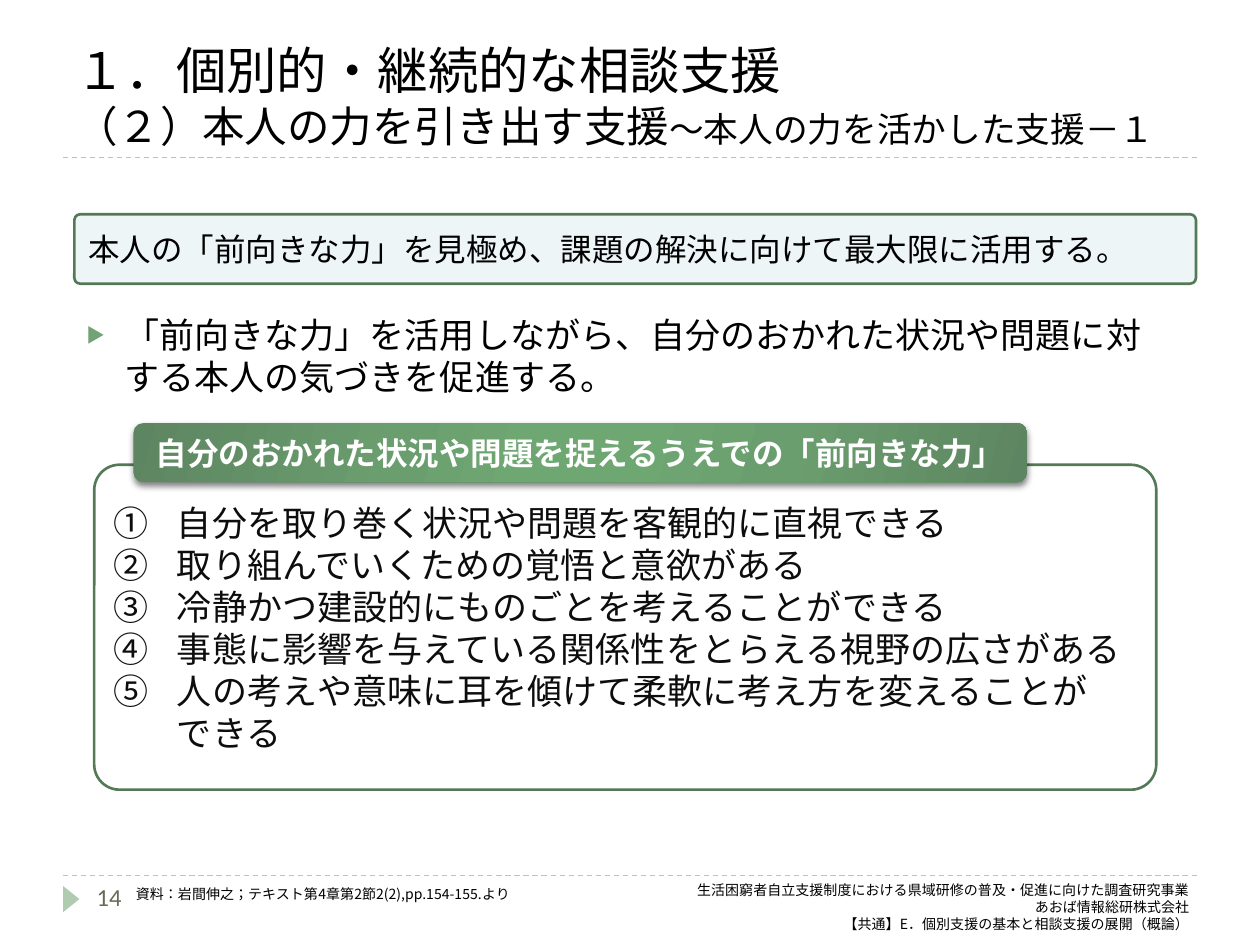
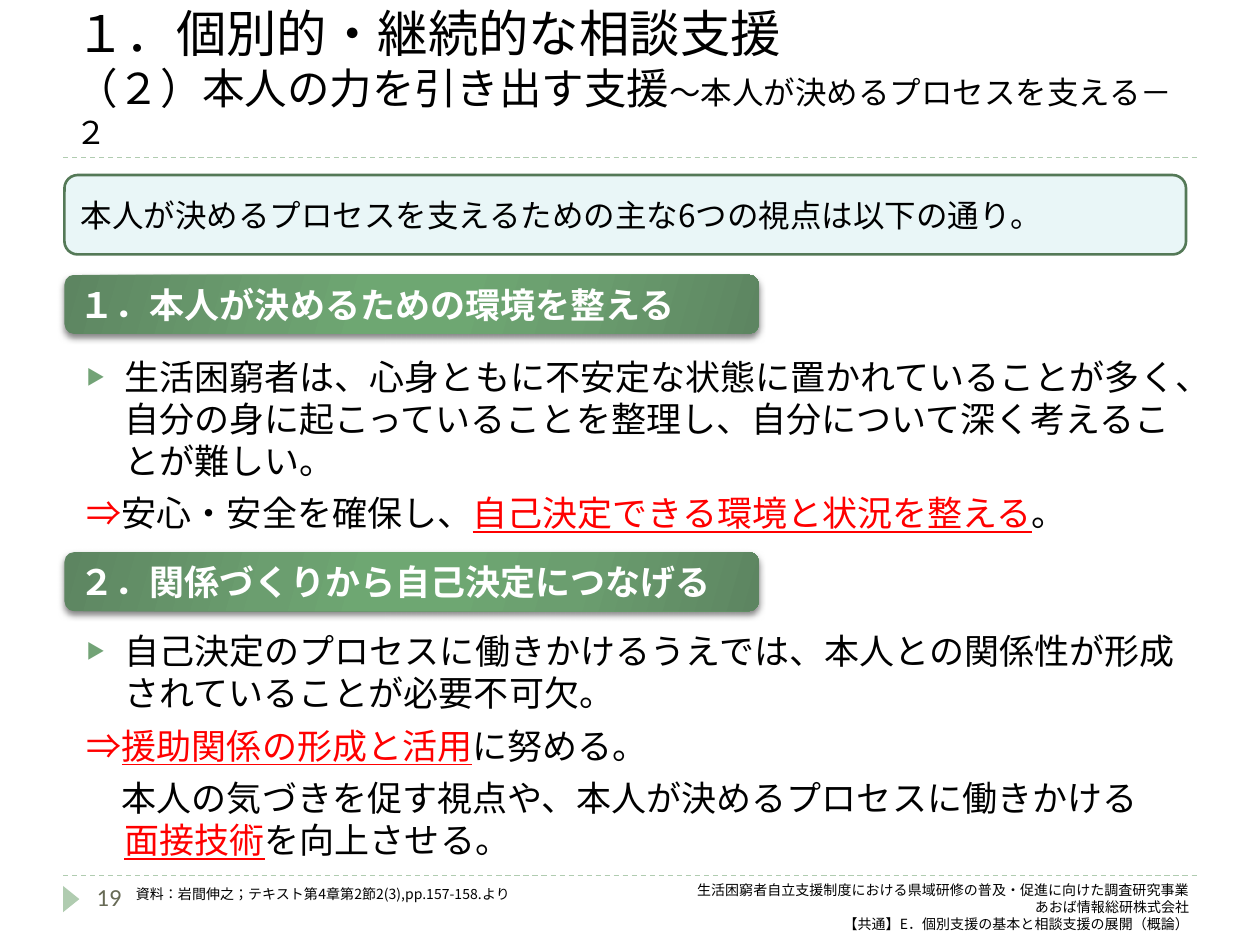
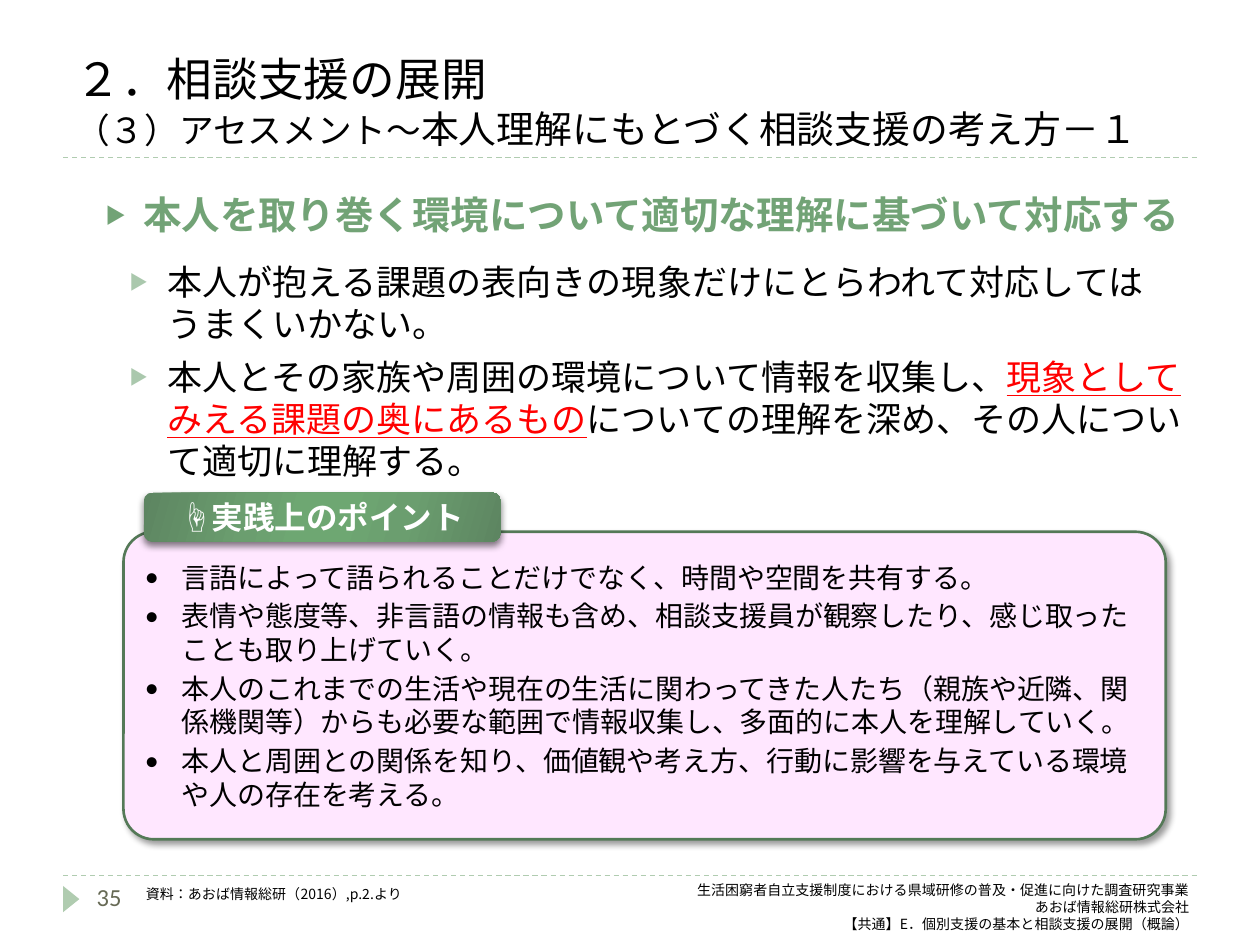
from dataclasses import dataclass

from lxml.etree import SubElement
from pptx import Presentation
from pptx.dml.color import RGBColor
from pptx.enum.dml import MSO_LINE
from pptx.enum.shapes import MSO_CONNECTOR, MSO_SHAPE
from pptx.enum.text import MSO_ANCHOR, PP_ALIGN
from pptx.oxml import parse_xml
from pptx.oxml.ns import nsdecls, qn
from pptx.util import Cm, Pt


@dataclass(frozen=True)
class Theme:
    font: str = "Noto Sans CJK JP"
    digit: str = "Calibri"
    black: str = "000000"
    ink: str = "0D0D0D"
    white: str = "FFFFFF"
    red: str = "FF0000"
    gray: str = "676A55"
    green: str = "72A376"
    pale: str = "AAC8AD"
    rule: str = "B0CCB0"
    edge: str = "547957"
    pink: str = "FFE7FF"
    fade: tuple = ((0, "5D8561"), (30, "6B9E6F"), (45, "6EA772"),
                   (55, "6EA772"), (73, "6B9E6F"), (100, "5D8561"))
    note: float = 8
    page: float = 14
    small: float = 16
    lead: float = 18
    body: float = 20
    head: float = 22


T = Theme()

# Paragraph kinds: indent in cm, space before and after in points, bullet
KINDS = {
    "plain": dict(),
    "arrow": dict(ind=0.76, hang=0.76, before=6, mark="▶", tint=T.green),
    "turn": dict(ind=0.76, hang=0.76, before=6),
    "sub": dict(ind=2.03, hang=0.76, before=6, mark="▶", tint=T.pale),
    "dot": dict(ind=0.74, hang=0.74, after=3, mark="•", font=T.digit),
    "count": dict(ind=1.27, hang=1.27, auto="circleNumDbPlain"),
}

FOOT = [
    "生活困窮者自立支援制度における県域研修の普及・促進に向けた調査研究事業",
    "あおば情報総研株式会社",
    "【共通】E．個別支援の基本と相談支援の展開（概論）",
]

# Content: boxes are left, top, width, height in cm.
# A paragraph is (kind, parts); a part is a string, or a tuple with its look.
SLIDES = [
    dict(
        page="14", wide=23.24,
        title=[("１．個別的・継続的な相談支援\v", 28.8),
               ("（２）本人の力を引き出す支援", 24.3),
               ("～本人の力を活かした支援－１", 19.8)],
        cite=("資料：岩間伸之；テキスト第4章第2節2(2),pp.154-155.より", 2.49, 11.2),
        parts=[
            ("text", (1.5, 6.2, 22.2, 4.11), dict(), [
                ("arrow", ["「前向きな力」を活用しながら、自分のおかれた状況や問題に対する本人の気づきを促進する。"])]),
            ("panel", (1.5, 4.32, 22.61, 1.4),
             dict(fill="EEF5F7", bend=0.084, size=T.lead), [
                ("plain", ["本人の「前向きな力」を見極め、課題の解決に向けて最大限に活用する。"])]),
            ("panel", (1.9, 9.37, 21.41, 6.55),
             dict(fill=T.white, bend=0.078, color=T.ink), [
                ("count", ["自分を取り巻く状況や問題を客観的に直視できる"]),
                ("count", ["取り組んでいくための覚悟と意欲がある"]),
                ("count", ["冷静かつ建設的にものごとを考えることができる"]),
                ("count", ["事態に影響を与えている関係性をとらえる視野の広さがある"]),
                ("count", ["人の考えや意味に耳を傾けて柔軟に考え方を変えることが　できる"])]),
            ("banner", (2.69, 8.53, 18.01, 1.19),
             dict(size=T.lead, align=PP_ALIGN.CENTER), [
                ("plain", ["自分のおかれた状況や問題を捉えるうえでの「前向きな力」"])]),
        ],
    ),
    dict(
        page="19", wide=23.24,
        title=[("１．個別的・継続的な相談支援\v", 28.8),
               ("（２）本人の力を引き出す支援", 24.3),
               ("～本人が決めるプロセスを支える－２", 18)],
        cite=("資料：岩間伸之；テキスト第4章第2節2(3),pp.157-158.より", 2.49, 11.2),
        parts=[
            ("text", (1.5, 7.04, 22.81, 3.89), dict(), [
                ("arrow", ["生活困窮者は、心身ともに不安定な状態に置かれていることが多く、自分の身に起こっていることを整理し、自分について深く考えることが難しい。"]),
                ("turn", [("⇒", "red"), "安心・安全を確保し、",
                          ("自己決定できる環境と状況を整える", "key"), "。"])]),
            ("banner", (1.3, 5.54, 14, 1.19), dict(), [
                ("plain", ["１．本人が決めるための環境を整える"])]),
            ("banner", (1.3, 11.13, 14, 1.19), dict(), [
                ("plain", ["２．関係づくりから自己決定につなげる"])]),
            ("text", (1.5, 12.57, 22.81, 4.95), dict(), [
                ("arrow", ["自己決定のプロセスに働きかけるうえでは、本人との関係性が形成されていることが必要不可欠。"]),
                ("turn", [("⇒", "red"), ("援助関係の形成と活用", "key"), "に努める。"]),
                ("turn", ["　本人の気づきを促す視点や、本人が決めるプロセスに働きかける　",
                          ("面接技術", "key"), "を向上させる。"])]),
            ("panel", (1.3, 3.53, 22.61, 1.6),
             dict(fill="E9F6F7", size=T.lead), [
                ("plain", ["本人が決めるプロセスを支えるための主な6つの視点は以下の通り。"])]),
        ],
    ),
    dict(
        page="35", wide=24.13,
        title=[("２．相談支援の展開\v", 26.1),
               ("（３）アセスメント～", 19.8),
               ("本人理解にもとづく相談支援の考え方－１", 21.6)],
        cite=("資料：あおば情報総研（2016）,p.2.より", 2.69, 14.2),
        parts=[
            ("panel", (2.49, 10.72, 21.01, 6.2),
             dict(fill=T.pink, bend=0.099, size=T.small, drop=(40, 4, 3, 45)), [
                ("dot", ["言語によって語られることだけでなく、時間や空間を共有する。"]),
                ("dot", ["表情や態度等、非言語の情報も含め、相談支援員が観察したり、感じ取ったことも取り上げていく。"]),
                ("dot", ["本人のこれまでの生活や現在の生活に関わってきた人たち（親族や近隣、関係機関等）からも必要な範囲で情報収集し、多面的に本人を理解していく。"]),
                ("dot", ["本人と周囲との関係を知り、価値観や考え方、行動に影響を与えている環境や人の存在を考える。"])]),
            ("text", (1.88, 3.73, 22.63, 2.01),
             dict(size=T.head, color=T.green, bold=True), [
                ("arrow", ["本人を取り巻く環境について適切な理解に基づいて対応する"])]),
            ("text", (1.09, 5.13, 23.01, 4.75), dict(), [
                ("sub", ["本人が抱える課題の表向きの現象だけにとらわれて対応しては　うまくいかない。"]),
                ("sub", ["本人とその家族や周囲の環境について情報を収集し、",
                         ("現象としてみえる課題の奥にあるもの", "key"),
                         "についての理解を深め、その人について適切に理解する。"])]),
            ("banner", (2.9, 9.93, 7.19, 0.99),
             dict(size=T.lead, align=PP_ALIGN.CENTER), [
                ("plain", ["☝実践上のポイント"])]),
        ],
    ),
]


# Text
def rgb(code):
    return RGBColor.from_string(code)


def style(run, size, color=T.black, bold=False, line=False, font=T.font):
    face = run.font
    face.size, face.bold, face.underline = Pt(size), bold, line
    face.name = font
    face.color.rgb = rgb(color)
    props = run._r.get_or_add_rPr()
    props.set("lang", "ja-JP")
    SubElement(props, qn("a:ea")).set("typeface", font)


def shape_para(para, ind=0, hang=0, before=0, after=0,
               mark=None, tint=None, auto=None, font=T.font):
    para.space_before, para.space_after = Pt(before), Pt(after)
    props = para._p.get_or_add_pPr()
    props.set("marL", str(Cm(ind)))
    props.set("indent", str(-Cm(hang)))
    if tint:
        SubElement(SubElement(props, qn("a:buClr")), qn("a:srgbClr")).set("val", tint)
        SubElement(props, qn("a:buSzPct")).set("val", "54000")
    if mark:
        SubElement(props, qn("a:buFont")).set("typeface", font)
        SubElement(props, qn("a:buChar")).set("char", mark)
    elif auto:
        SubElement(props, qn("a:buAutoNum")).set("type", auto)


def write(frame, paras, size=T.body, color=T.black, bold=False, align=PP_ALIGN.LEFT):
    frame.word_wrap = True
    for n, (kind, parts) in enumerate(paras):
        para = frame.add_paragraph() if n else frame.paragraphs[0]
        para.alignment = align
        shape_para(para, **KINDS[kind])
        for part in parts:
            text, look = (part, "") if isinstance(part, str) else part
            run = para.add_run()
            run.text = text
            style(run, size, T.red if look else color, bold, look == "key")


# Parts
def text_box(slide, box):
    frame = slide.shapes.add_textbox(*map(Cm, box)).text_frame
    frame.word_wrap = True
    return frame


def add_drop(shape, alpha, blur, dist, turn):
    host = shape._element.spPr.find(qn("a:effectLst"))
    drop = SubElement(host, qn("a:outerShdw"), blurRad=str(Pt(blur)), dist=str(Pt(dist)),
                      dir=str(turn * 60000), algn="ctr", rotWithShape="0")
    tone = SubElement(drop, qn("a:srgbClr"), val=T.black)
    SubElement(tone, qn("a:alpha"), val=str(alpha * 1000))


def add_round(slide, box, bend=None):
    shape = slide.shapes.add_shape(MSO_SHAPE.ROUNDED_RECTANGLE, *map(Cm, box))
    shape.shadow.inherit = False
    if bend:
        shape.adjustments[0] = bend
    shape.text_frame.vertical_anchor = MSO_ANCHOR.MIDDLE
    return shape


def add_text(slide, box, paras, **look):
    write(text_box(slide, box), paras, **look)


def add_panel(slide, box, paras, fill, bend=None, drop=None, **look):
    shape = add_round(slide, box, bend)
    shape.fill.solid()
    shape.fill.fore_color.rgb = rgb(fill)
    shape.line.color.rgb = rgb(T.edge)
    shape.line.width = Pt(1.5)
    if drop:
        add_drop(shape, *drop)
    write(shape.text_frame, paras, **look)


def add_banner(slide, box, paras, **look):
    shape = add_round(slide, box)
    shape.line.fill.background()
    stops = "".join(f'<a:gs pos="{pos * 1000}"><a:srgbClr val="{tone}"/></a:gs>'
                    for pos, tone in T.fade)
    fill = parse_xml(f'<a:gradFill {nsdecls("a")} rotWithShape="1"><a:gsLst>{stops}</a:gsLst>'
                     f'<a:lin ang="{16 * 60000}" scaled="0"/></a:gradFill>')
    shape._element.spPr.find(qn("a:prstGeom")).addnext(fill)
    add_drop(shape, 50, 4, 2, 90)
    write(shape.text_frame, paras, color=T.white, bold=True, **look)


ADD = {"text": add_text, "panel": add_panel, "banner": add_banner}


# Shared rules, page mark, title and footer
def add_base(slide, item):
    for top in (17.65, 3.18):
        rule = slide.shapes.add_connector(
            MSO_CONNECTOR.STRAIGHT, Cm(1.27), Cm(top), Cm(24.13), Cm(top))
        rule.line.color.rgb = rgb(T.rule)
        rule.line.width = Pt(0.75)
        rule.line.dash_style = MSO_LINE.DASH
        SubElement(rule._element.spPr, qn("a:effectLst"))

    mark = slide.shapes.add_shape(
        MSO_SHAPE.ISOSCELES_TRIANGLE, Cm(1.17), Cm(17.96), Cm(0.53), Cm(0.33))
    mark.rotation = 90
    mark.shadow.inherit = False
    mark.fill.solid()
    mark.fill.fore_color.rgb = rgb(T.rule)
    mark.line.fill.background()

    page = text_box(slide, (1.7, 17.65, 1.47, 1.02))
    page.text = item["page"]
    style(page.paragraphs[0].runs[0], T.page, T.gray, font=T.digit)

    title = text_box(slide, (1.27, 0.43, item["wide"], 2.74))
    title.vertical_anchor = MSO_ANCHOR.BOTTOM
    para = title.paragraphs[0]
    para.text = item["title"][0][0]
    for text, _ in item["title"][1:]:
        para.add_run().text = text
    shape_para(para)
    for run, (_, size) in zip(para.runs, item["title"]):
        style(run, size)

    text, left, wide = item["cite"]
    add_text(slide, (left, 17.73, wide, 0.61), [("plain", [text])], size=T.note)
    add_text(slide, (6.35, 17.65, 17.88, 1.4), [("plain", [row]) for row in FOOT],
             size=T.note, align=PP_ALIGN.RIGHT)


def main():
    deck = Presentation()
    deck.slide_width, deck.slide_height = Cm(25.4), Cm(19.05)
    for item in SLIDES:
        slide = deck.slides.add_slide(deck.slide_layouts[6])
        add_base(slide, item)
        for kind, box, look, paras in item["parts"]:
            ADD[kind](slide, box, paras, **look)
    deck.save("out.pptx")


if __name__ == "__main__":
    main()
